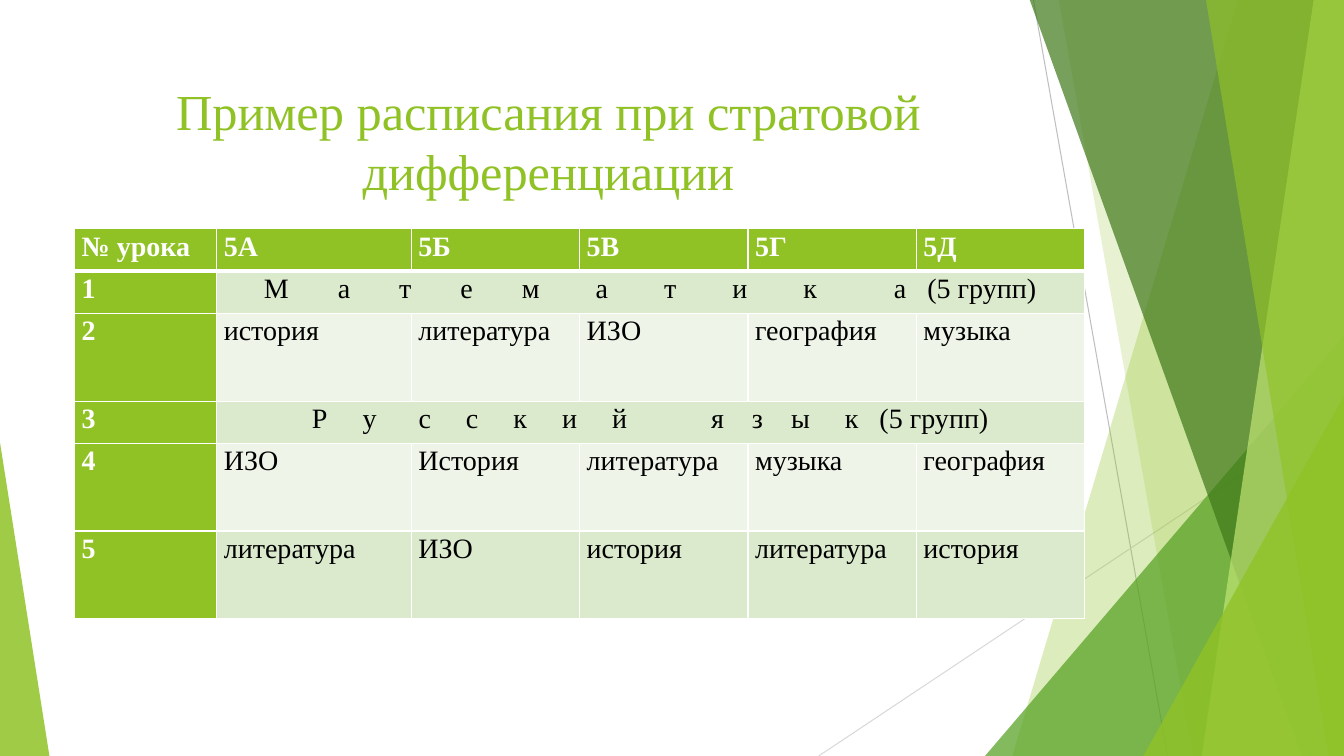
from lxml import etree
from pptx import Presentation
from pptx import util as u
from pptx.dml.color import RGBColor
from pptx.enum import shapes, text
from pptx.oxml.ns import qn

FONT = "Times New Roman"
GREEN, WHITE, BLACK = "90C226", "FFFFFF", "000000"
TOP, BOTTOM, RIGHT = -0.01, 7.5, 13.33

THIN_LINES = [
    ((10.25, 0), (11.58, 7.5), "BFBFBF"),
    ((13.33, 4.03), (8.12, 7.5), "D9D9D9"),
]
# Top and bottom x of the slanted left edge, colour, opacity in percent
BACK_BANDS = [(12.28, 10.04, GREEN, 30), (10.5, 11.83, GREEN, 20)]
FRONT_BANDS = [
    (10.21, 12.91, "3F7819", 70),
    (13.03, 11.92, "C0E474", 70),
    (11.96, 13.18, GREEN, 65),
]

COLUMNS = [1.41, 1.93] + [1.67] * 4
LOW, TALL = 0.42, 0.87
HEADINGS = ["№ урока", "5А", "5Б", "5В", "5Г", "5Д"]
# A lesson with one subject is shared by all classes
LESSONS = [
    ["М       а       т       е       м        а        т        и        к           а   (5 групп)"],
    ["история", "литература", "ИЗО", "география", "музыка"],
    ["Р     у      с     с     к     и     й            я    з    ы     к   (5 групп)"],
    ["ИЗО", "История", "литература", "музыка", "география"],
    ["литература", "ИЗО", "история", "литература", "история"],
]
ODD_ROW, EVEN_ROW = "DBE9CD", "EEF4E8"


def colour(value):
    return RGBColor.from_string(value)


def paint(shape, fill, opacity):
    """Give a shape a translucent fill with no outline or shadow."""
    shape.shadow.inherit = False
    shape.line.fill.background()
    shape.fill.solid()
    shape.fill.fore_color.rgb = colour(fill)
    tint = shape.element.spPr.find(qn("a:solidFill"))[0]
    etree.SubElement(tint, qn("a:alpha"), val=str(opacity * 1000))


def add_thin_line(page, start, end, stroke):
    points = [u.Inches(value) for value in start + end]
    line = page.shapes.add_connector(shapes.MSO_CONNECTOR.STRAIGHT, *points)
    line.line.color.rgb = colour(stroke)
    line.line.width = u.Pt(0.75)
    etree.SubElement(line.element.spPr, qn("a:effectLst"))


def add_band(page, top_x, bottom_x, fill, opacity):
    """Fill the area from a slanted edge to the right side of the page."""
    corners = [(top_x, TOP), (RIGHT, TOP), (RIGHT, BOTTOM), (bottom_x, BOTTOM)]
    points = [(u.Inches(x), u.Inches(y)) for x, y in corners]
    builder = page.shapes.build_freeform(*points[0])
    builder.add_line_segments(points[1:], close=True)
    paint(builder.convert_to_shape(), fill, opacity)


def add_triangle(page, left, top, width, apex, fill, opacity):
    """Stand a triangle on the bottom edge, its apex at a share of the width."""
    box = [u.Inches(value) for value in (left, top, width, BOTTOM - top)]
    triangle = page.shapes.add_shape(shapes.MSO_SHAPE.ISOSCELES_TRIANGLE, *box)
    triangle.adjustments[0] = apex
    paint(triangle, fill, opacity)


def add_span(para, words, size, ink, bold=False):
    span = para.add_run()
    span.text = words
    span.font.name = FONT
    span.font.size = u.Pt(size)
    span.font.bold = bold
    span.font.color.rgb = colour(ink)


def set_title(page, words):
    title = page.shapes.title
    title.left, title.top = u.Inches(0.74), u.Inches(0.67)
    title.width, title.height = u.Inches(9.4), u.Inches(1.44)
    frame = title.text_frame
    frame.word_wrap = True
    frame.auto_size = text.MSO_AUTO_SIZE.NONE
    frame.vertical_anchor = text.MSO_ANCHOR.MIDDLE
    para = frame.paragraphs[0]
    para.alignment = text.PP_ALIGN.CENTER
    add_span(para, words, 36, GREEN)


def style_cell(cell, row, fill):
    """Set margins, white borders (thick under the headings) and fill."""
    cell.margin_left = cell.margin_right = u.Inches(0.07)
    cell.margin_top = cell.margin_bottom = 0
    properties = cell._tc.get_or_add_tcPr()
    widths = {"L": 1, "R": 1, "T": 3 if row == 1 else 1, "B": 3 if row == 0 else 1}
    for side, width in widths.items():
        border = etree.SubElement(properties, qn(f"a:ln{side}"), w=str(u.Pt(width)))
        solid = etree.SubElement(border, qn("a:solidFill"))
        etree.SubElement(solid, qn("a:srgbClr"), val=WHITE)
    cell.fill.solid()
    cell.fill.fore_color.rgb = colour(fill)


def write_cell(cell, words, ink, bold, centred):
    para = cell.text_frame.paragraphs[0]
    para.line_spacing = 1.07
    if centred:
        para.alignment = text.PP_ALIGN.CENTER
    add_span(para, words, 20, ink, bold)


def add_timetable(page):
    rows = [HEADINGS] + [[str(n), *lesson] for n, lesson in enumerate(LESSONS, 1)]
    heights = [LOW if row == 0 or len(line) == 2 else TALL for row, line in enumerate(rows)]
    box = [u.Inches(value) for value in (0.74, 2.27, sum(COLUMNS), sum(heights))]
    table = page.shapes.add_table(len(rows), len(COLUMNS), *box).table
    for column, width in zip(table.columns, COLUMNS):
        column.width = u.Inches(width)
    for row, (line, height) in enumerate(zip(rows, heights)):
        table.rows[row].height = u.Inches(height)
        shared = len(line) == 2
        if shared:
            table.cell(row, 1).merge(table.cell(row, len(COLUMNS) - 1))
        for column in range(len(COLUMNS)):
            cell = table.cell(row, column)
            heading = row == 0 or column == 0
            band = ODD_ROW if row % 2 else EVEN_ROW
            style_cell(cell, row, GREEN if heading else band)
            if column < len(line):
                ink = WHITE if heading else BLACK
                write_cell(cell, line[column], ink, heading, shared and column == 1)


def main():
    deck = Presentation()
    deck.slide_width, deck.slide_height = u.Inches(13.33), u.Inches(7.5)
    page = deck.slides.add_slide(deck.slide_layouts[5])
    for line in THIN_LINES:
        add_thin_line(page, *line)
    for band in BACK_BANDS:
        add_band(page, *band)
    add_triangle(page, 9.77, 3.33, 3.56, 1, "54A021", 72)
    for band in FRONT_BANDS:
        add_band(page, *band)
    add_triangle(page, 11.34, 3.93, 1.99, 1, GREEN, 80)
    add_triangle(page, 0, 4.39, 0.49, 0, GREEN, 85)
    set_title(page, "Пример расписания при стратовой дифференциации")
    add_timetable(page)
    deck.save("out.pptx")


if __name__ == "__main__":
    main()
